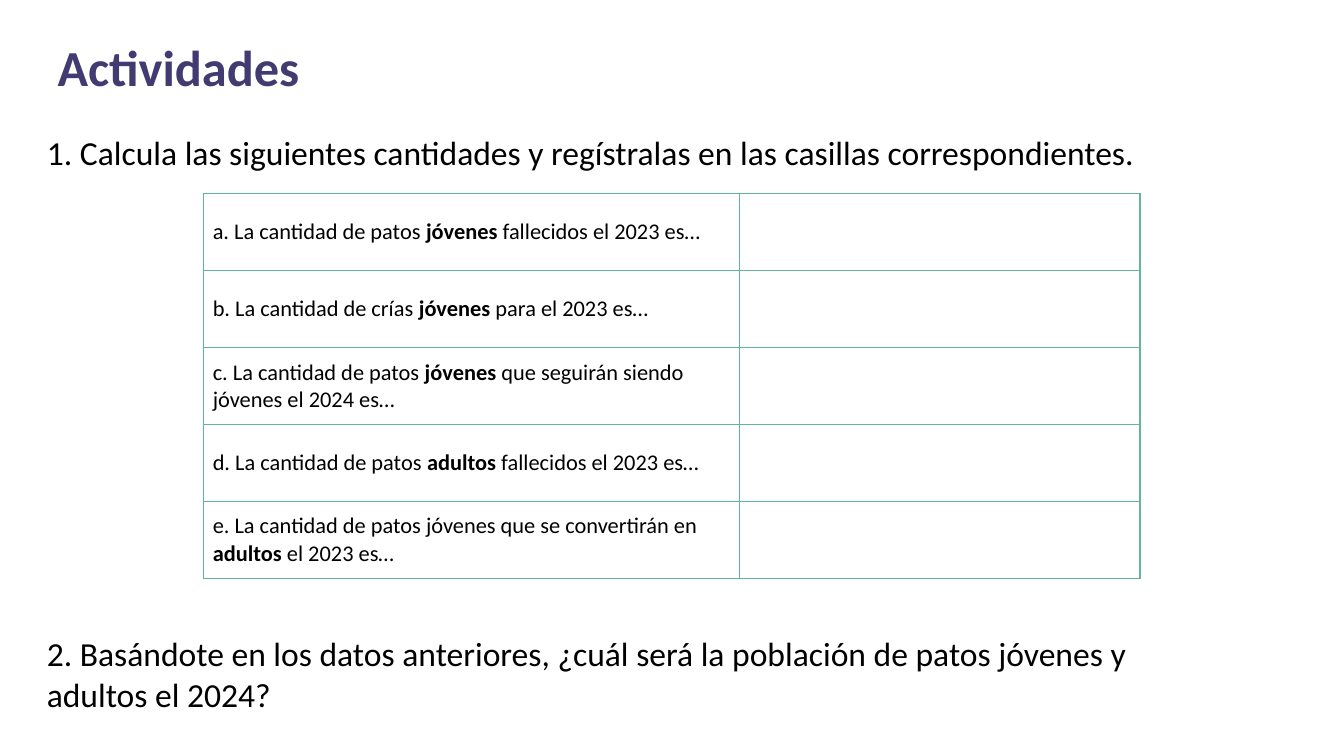
from lxml import etree
from pptx import Presentation
from pptx import util as u
from pptx.dml.color import RGBColor
from pptx.enum import text
from pptx.oxml.ns import qn

BLACK = RGBColor(0x00, 0x00, 0x00)
PURPLE = RGBColor(0x42, 0x3B, 0x71)
GREEN = RGBColor(0x60, 0xB6, 0x98)
ANSWER_GREEN = RGBColor(0x63, 0xB7, 0x99)

BODY = {"name": "Calibri", "size": u.Pt(18), "bold": False}
TITLE = {"name": "Calibri", "size": u.Pt(27), "bold": True}
CELL = {"name": "Calibri", "size": u.Pt(12)}

# (left, top, width, height), wording, font, colour
TEXTS = [
    ((18, 63.4, 612.7, 36), "1. Calcula las siguientes cantidades y regístralas "
     "en las casillas correspondientes.", BODY, BLACK),
    ((23.8, 12.2, 236, 47.5), "Actividades", TITLE, PURPLE),
    ((18, 332, 643, 58.3), "2. Basándote en los datos anteriores, ¿cuál será la "
     "población de patos jóvenes y adultos el 2024?", BODY, BLACK),
]

# Wording before, in and after the bold part
QUESTIONS = [
    ("a. La cantidad de patos ", "jóvenes ", "fallecidos el 2023 es…"),
    ("b. La cantidad de crías ", "jóvenes ", "para el 2023 es…"),
    ("c. La cantidad de patos ", "jóvenes ", "que seguirán siendo jóvenes el 2024 es…"),
    ("d. La cantidad de patos ", "adultos ", "fallecidos el 2023 es…"),
    ("e. La cantidad de patos jóvenes que se convertirán en ", "adultos ", "el 2023 es…"),
]
TABLE_LEFT, TABLE_TOP, ROW_HEIGHT = 109, 103.7, 41.25
COLUMNS = (287.3, 214.5)


def set_format(obj, values):
    for name, value in values.items():
        setattr(obj, name, value)


def add_run(p, wording, font, color):
    r = p.add_run()
    r.text = wording
    set_format(r.font, font)
    r.font.color.rgb = color


def add_text(slide, box, wording, font, color):
    tf = slide.shapes.add_textbox(*map(u.Pt, box)).text_frame
    set_format(tf, {"word_wrap": True, "auto_size": text.MSO_AUTO_SIZE.NONE})
    set_format(tf, {f"margin_{side}": u.Pt(7.2)
                    for side in ("left", "top", "right", "bottom")})
    add_run(tf.paragraphs[0], wording, font, color)


def set_borders(cell, borders):
    """Draw borders given as (side letter, colour, points), in L, R, T, B order."""
    tcPr = cell._tc.get_or_add_tcPr()
    for i, (side, color, width) in enumerate(borders):
        ln = etree.Element(qn(f"a:ln{side}"), w=str(u.Pt(width)))
        fill = etree.SubElement(ln, qn("a:solidFill"))
        etree.SubElement(fill, qn("a:srgbClr"), val=str(color))
        tcPr.insert(i, ln)


def add_question_table(slide):
    table = slide.shapes.add_table(
        len(QUESTIONS), len(COLUMNS), u.Pt(TABLE_LEFT), u.Pt(TABLE_TOP),
        u.Pt(sum(COLUMNS)), u.Pt(ROW_HEIGHT * len(QUESTIONS))).table
    set_format(table, {"first_row": False, "horz_banding": False})
    for column, width in zip(table.columns, COLUMNS):
        column.width = u.Pt(width)
    question_borders = [(side, GREEN, 0.5) for side in "LRTB"]
    answer_borders = [("L", GREEN, 0.5)] + [(side, ANSWER_GREEN, 1) for side in "RTB"]
    for row, parts in zip(table.rows, QUESTIONS):
        row.height = u.Pt(ROW_HEIGHT)
        for cell, borders in zip(row.cells, (question_borders, answer_borders)):
            set_format(cell, {"vertical_anchor": text.MSO_ANCHOR.MIDDLE,
                              "margin_left": u.Pt(5), "margin_right": u.Pt(5),
                              "margin_top": 0, "margin_bottom": 0})
            cell.fill.background()
            set_borders(cell, borders)
        p = row.cells[0].text_frame.paragraphs[0]
        for part, bold in zip(parts, (False, True, False)):
            add_run(p, part, {**CELL, "bold": bold}, BLACK)


def main():
    prs = Presentation()
    set_format(prs, {"slide_width": u.Pt(720), "slide_height": u.Pt(405)})
    slide = prs.slides.add_slide(prs.slide_layouts[6])
    add_question_table(slide)
    for item in TEXTS:
        add_text(slide, *item)
    prs.save("out.pptx")


if __name__ == "__main__":
    main()
